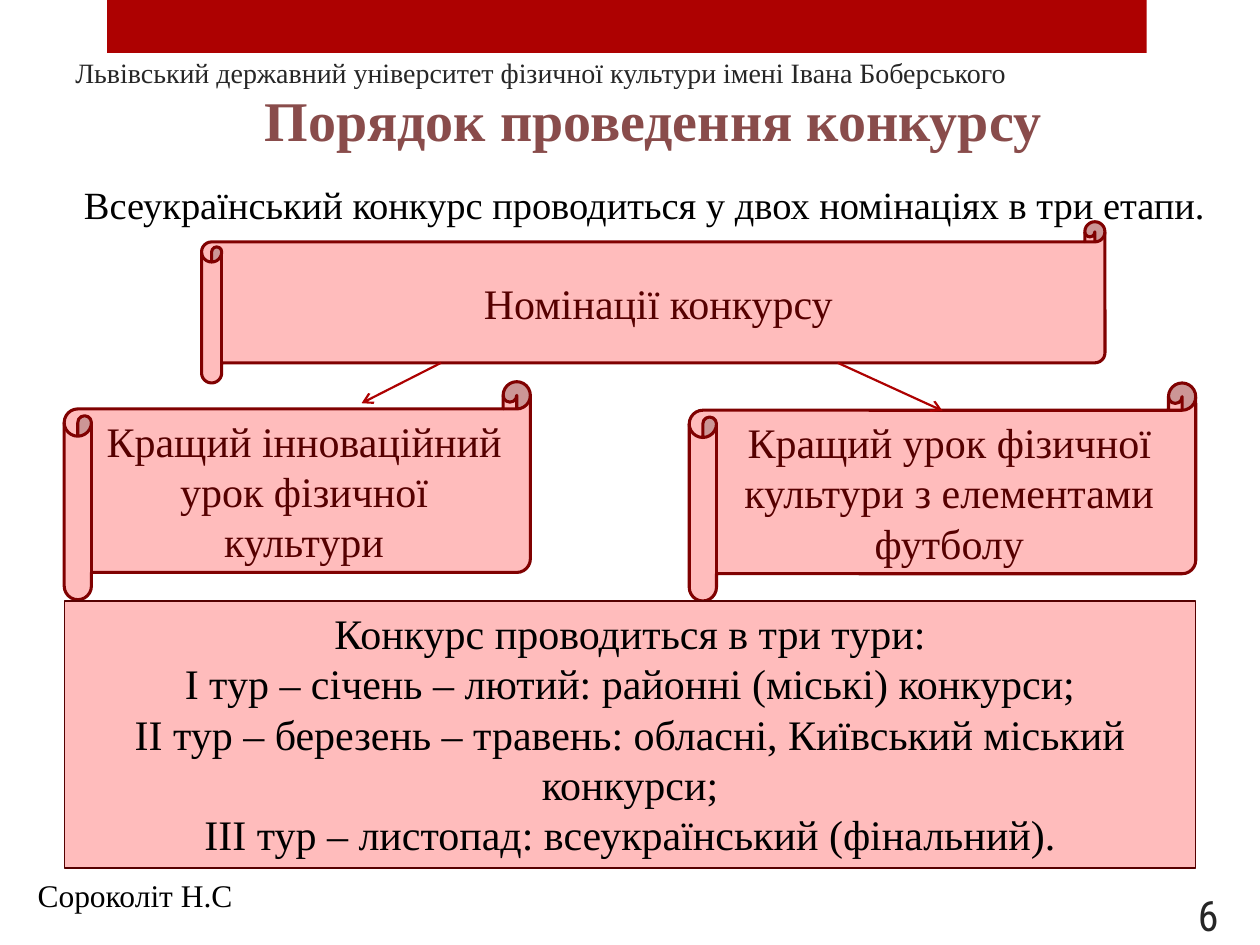
from pptx import Presentation
from pptx.dml.color import RGBColor
from pptx.enum.shapes import MSO_CONNECTOR as CONNECTOR, MSO_SHAPE as SHAPE
from pptx.enum.text import MSO_ANCHOR as ANCHOR, PP_ALIGN as ALIGN
from pptx.oxml.ns import qn
from pptx.util import Inches, Pt
from lxml import etree

RED = RGBColor(0xAD, 0x01, 0x01)
DARK_RED = RGBColor(0x80, 0x01, 0x01)
MAROON = RGBColor(0x56, 0x00, 0x00)
PINK = RGBColor(0xFF, 0xBC, 0xBC)
ROSE = RGBColor(0x89, 0x4C, 0x4B)
GRAY = RGBColor(0x26, 0x26, 0x26)
BLACK = RGBColor(0x00, 0x00, 0x00)
SERIF = "Times New Roman"
NUMBER_FONT = "Roboto Condensed"


def write_text(shape, *lines, size=24, color=BLACK, font=SERIF, bold=False,
               align=ALIGN.CENTER, anchor=ANCHOR.TOP, wrap=True):
    """Fill a shape with one formatted paragraph per line."""
    frame = shape.text_frame
    frame.word_wrap = wrap
    frame.vertical_anchor = anchor
    for index, line in enumerate(lines):
        paragraph = frame.add_paragraph() if index else frame.paragraphs[0]
        paragraph.text = line
        paragraph.alignment = align
        paragraph.font.size = Pt(size)
        paragraph.font.name = font
        paragraph.font.bold = bold
        paragraph.font.color.rgb = color


def add_label(slide, box, text, **text_format):
    """Place a text box in the given box."""
    label = slide.shapes.add_textbox(*map(Inches, box))
    write_text(label, text, **text_format)


def add_panel(slide, box, kind, fill, line=None, width=0.75):
    """Place a filled preset shape in the given box."""
    panel = slide.shapes.add_shape(kind, *map(Inches, box))
    panel.shadow.inherit = False
    panel.fill.solid()
    panel.fill.fore_color.rgb = fill
    if line is None:
        panel.line.fill.background()
    else:
        panel.line.color.rgb = line
        panel.line.width = Pt(width)
    return panel


def add_scroll(slide, box, text):
    """Place a scroll with a centred caption in the given box."""
    scroll = add_panel(slide, box, SHAPE.HORIZONTAL_SCROLL, PINK, DARK_RED, 1.75)
    write_text(scroll, text, color=MAROON, anchor=ANCHOR.MIDDLE)


def add_arrow(slide, start, end):
    """Draw an open-headed arrow between two points."""
    arrow = slide.shapes.add_connector(CONNECTOR.STRAIGHT, *map(Inches, start + end))
    arrow.line.color.rgb = RED
    arrow.line.width = Pt(1.25)
    etree.SubElement(arrow.line._get_or_add_ln(), qn("a:tailEnd"), type="arrow")
    etree.SubElement(arrow._element.spPr, qn("a:effectLst"))


def add_header(slide, left, top, width):
    """Place the red band, the university, the title and the introduction."""
    add_panel(slide, (left, top, width, 0.42), SHAPE.RECTANGLE, RED)
    add_label(slide, (left - 0.35, top + 0.3, 9, 0.46),
              "Львівський державний університет фізичної культури імені Івана Боберського",
              size=16, color=GRAY, align=ALIGN.LEFT, anchor=ANCHOR.BOTTOM)
    add_label(slide, (left + 1.12, top + 0.63, 6.43, 0.64), "Порядок проведення конкурсу",
              size=32, color=ROSE, bold=True, wrap=False)
    add_label(slide, (left - 0.62, top + 1.39, 9.77, 0.47),
              "Всеукраїнський конкурс проводиться у двох номінаціях в три етапи.", size=22)


def add_nominations(slide, left, top, width):
    """Place the heading scroll and the two nominations it points to."""
    right_width = 4.02
    add_scroll(slide, (left + 1.09, top, 7.17, 1.28), "Номінації конкурсу")
    add_scroll(slide, (left + width - right_width, top + 1.28, right_width, 1.73),
               "Кращий урок фізичної культури з елементами футболу")
    add_scroll(slide, (left, top + 1.27, 3.7, 1.73),
               "Кращий інноваційний урок фізичної культури")
    add_arrow(slide, (left + 2.99, top + 1.12), (left + 2.36, top + 1.44))
    add_arrow(slide, (left + 6.14, top + 1.12), (left + 6.97, top + 1.5))


def add_rounds(slide, box):
    """Place the panel that lists the three rounds."""
    rounds = add_panel(slide, box, SHAPE.RECTANGLE, PINK, MAROON)
    write_text(rounds,
               "Конкурс проводиться в три тури:",
               "І тур – січень – лютий: районні (міські) конкурси;",
               "ІІ тур – березень – травень: обласні, Київський міський конкурси;",
               "ІІІ тур – листопад: всеукраїнський (фінальний).")


def add_footer(slide, left, top):
    """Place the author and the page number."""
    add_label(slide, (left, top, 1.77, 0.4), "Сороколіт Н.С", size=18, align=ALIGN.LEFT)
    add_label(slide, (left + 8.74, top + 0.16, 0.83, 0.4), "6", color=GRAY,
              font=NUMBER_FONT, align=ALIGN.RIGHT, anchor=ANCHOR.MIDDLE)


def main():
    """Build the slide and save it."""
    deck = Presentation()
    deck.slide_width, deck.slide_height = Inches(10), Inches(7.5)
    slide = deck.slides.add_slide(deck.slide_layouts[6])
    add_header(slide, 0.85, 0, 8.25)
    add_nominations(slide, 0.51, 1.76, 8.98)
    add_rounds(slide, (0.51, 4.77, 8.98, 2.12))
    add_footer(slide, 0.2, 6.9)
    deck.save("out.pptx")


if __name__ == "__main__":
    main()
